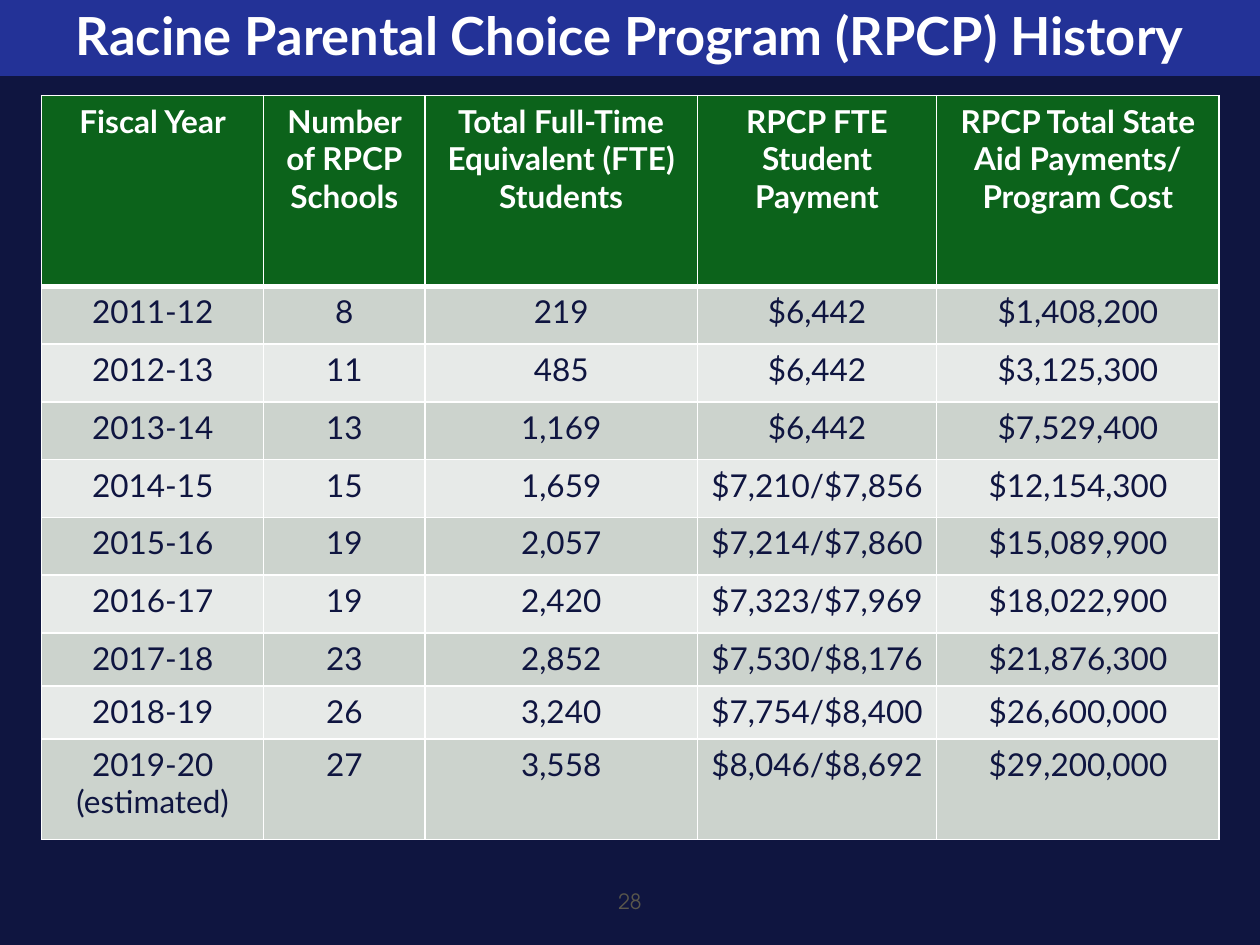
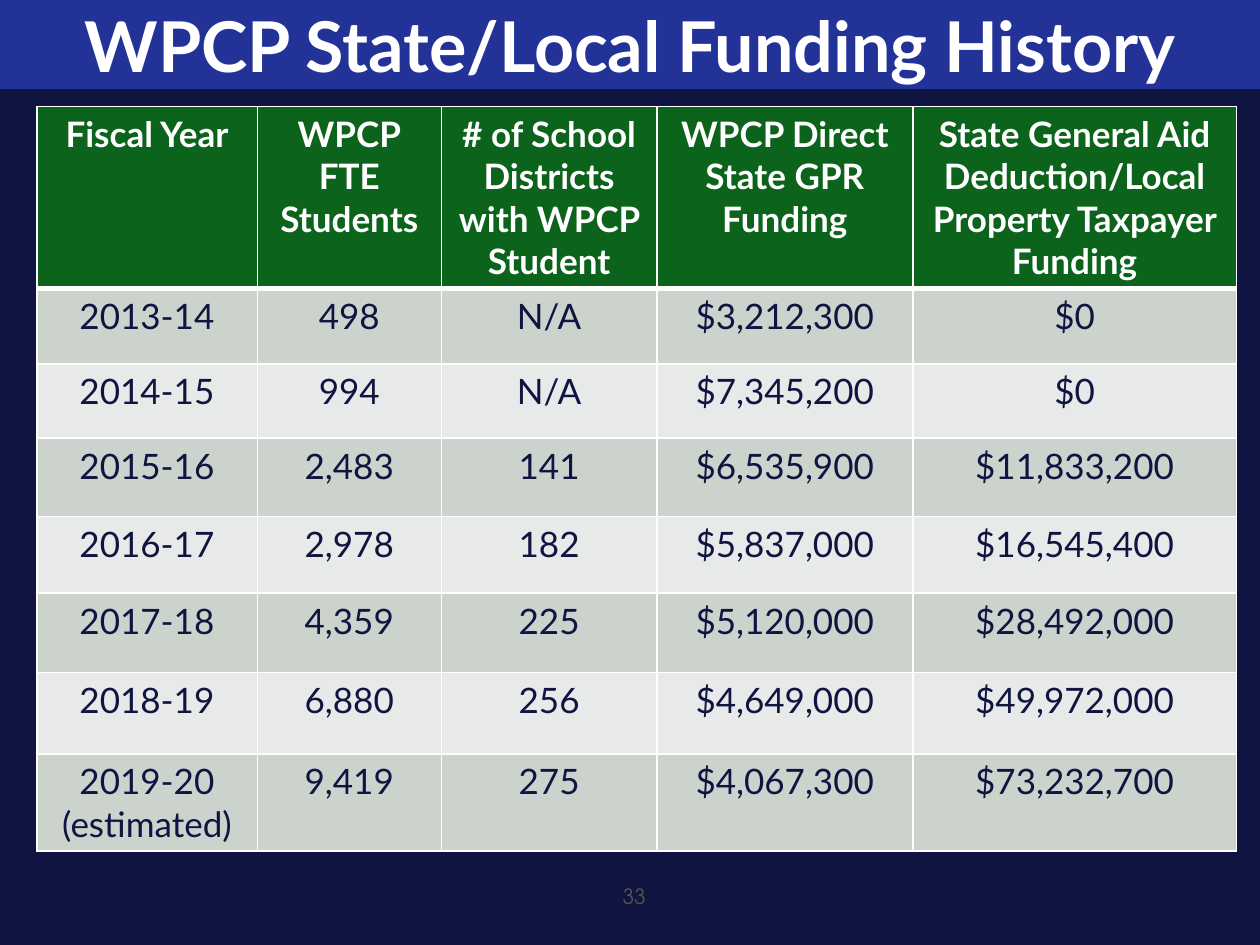
from lxml import etree
from pptx import Presentation
from pptx.dml.color import RGBColor
from pptx.enum.text import MSO_ANCHOR, MSO_AUTO_SIZE, PP_ALIGN
from pptx.oxml.ns import qn
from pptx.util import Pt

CENTER = PP_ALIGN.CENTER
MIDDLE = MSO_ANCHOR.MIDDLE
NO_AUTOFIT = MSO_AUTO_SIZE.NONE

NAVY = RGBColor(0x0F, 0x15, 0x40)
BLUE = RGBColor(0x23, 0x32, 0x97)
GREEN = RGBColor(0x0C, 0x63, 0x1B)
WHITE = RGBColor(0xFF, 0xFF, 0xFF)
GREY = RGBColor(0x59, 0x56, 0x4B)
BAND_DARK = RGBColor(0xCC, 0xD3, 0xCD)
BAND_LIGHT = RGBColor(0xE7, 0xEA, 0xE8)

TEXT_FONT = "Lato"
NUMBER_FONT = "TeX Gyre Adventor"
THIN, THICK = Pt(1), Pt(3)

# In cells, "\n" starts a paragraph and "\v" breaks a line.
RACINE_ROWS = [
    ["Fiscal Year", "Number of RPCP\nSchools",
     "Total Full-Time\nEquivalent (FTE) Students",
     "RPCP FTE Student\nPayment",
     "RPCP Total State Aid Payments/\nProgram Cost"],
    ["2011-12", "8", "219", "$6,442", "$1,408,200"],
    ["2012-13", "11", "485", "$6,442", "$3,125,300"],
    ["2013-14", "13", "1,169", "$6,442", "$7,529,400"],
    ["2014-15", "15", "1,659", "$7,210/$7,856", "$12,154,300"],
    ["2015-16", "19", "2,057", "$7,214/$7,860", "$15,089,900"],
    ["2016-17", "19", "2,420", "$7,323/$7,969", "$18,022,900"],
    ["2017-18", "23", "2,852", "$7,530/$8,176", "$21,876,300"],
    ["2018-19", "26", "3,240", "$7,754/$8,400", "$26,600,000"],
    ["2019-20\v(estimated)", "27", "3,558", "$8,046/$8,692", "$29,200,000"],
]
WPCP_ROWS = [
    ["Fiscal Year", "WPCP\nFTE Students",
     "# of School Districts with WPCP Student",
     "WPCP Direct State GPR Funding",
     "State General Aid Deduction/Local Property Taxpayer Funding"],
    ["2013-14", "498", "N/A", "$3,212,300", "$0"],
    ["2014-15", "994", "N/A", "$7,345,200", "$0"],
    ["2015-16", "2,483", "141", "$6,535,900", "$11,833,200"],
    ["2016-17", "2,978", "182", "$5,837,000", "$16,545,400"],
    ["2017-18", "4,359", "225", "$5,120,000", "$28,492,000"],
    ["2018-19", "6,880", "256", "$4,649,000", "$49,972,000"],
    ["2019-20\v(estimated)", "9,419", "275", "$4,067,300", "$73,232,700"],
]


class HistoryDeck:
    """Holds the shared style and the slide being built."""

    def __init__(self):
        self.deck = Presentation()
        self.deck.slide_width, self.deck.slide_height = Pt(720), Pt(540)
        background = self.deck.slide_master.background.fill
        background.solid()
        background.fore_color.rgb = NAVY
        self.slide = None

    def add_slide(self):
        self.slide = self.deck.slides.add_slide(self.deck.slide_layouts[5])

    def set_text(self, frame, text, size, color, bold=False, font=TEXT_FONT):
        frame.word_wrap = True
        frame.text = text
        for paragraph in frame.paragraphs:
            paragraph.alignment = CENTER
            paragraph.font.name = font
            paragraph.font.size = Pt(size)
            paragraph.font.bold = bold
            paragraph.font.color.rgb = color

    def title(self, text, top, height, size):
        band = self.slide.shapes.title
        band.left, band.top = Pt(0), Pt(top)
        band.width, band.height = self.deck.slide_width, Pt(height)
        band.fill.solid()
        band.fill.fore_color.rgb = BLUE
        band.text_frame.auto_size = NO_AUTOFIT
        band.text_frame.vertical_anchor = MIDDLE
        self.set_text(band.text_frame, text, size, WHITE, bold=True)

    def page_number(self, number, left, top):
        box = self.slide.shapes.add_textbox(Pt(left), Pt(top), Pt(228), Pt(29))
        box.text_frame.vertical_anchor = MIDDLE
        self.set_text(box.text_frame, str(number), 12, GREY, font=NUMBER_FONT)

    def cell_borders(self, cell, top, bottom):
        """Draw white borders; they must come before the fill in the cell."""
        properties = cell._tc.get_or_add_tcPr()
        sides = {"L": THIN, "R": THIN, "T": top, "B": bottom}
        for position, (side, width) in enumerate(sides.items()):
            line = etree.Element(qn(f"a:ln{side}"), w=str(width))
            fill = etree.SubElement(line, qn("a:solidFill"))
            etree.SubElement(fill, qn("a:srgbClr"), val=str(WHITE))
            properties.insert(position, line)

    def table(self, rows, left, top, widths, heights, size):
        frame = self.slide.shapes.add_table(
            len(rows), len(widths), Pt(left), Pt(top),
            Pt(sum(widths)), Pt(sum(heights)))
        table = frame.table
        for column, width in zip(table.columns, widths):
            column.width = Pt(width)
        for index, (row, height) in enumerate(zip(table.rows, heights)):
            row.height = Pt(height)
            header = index == 0
            band = GREEN if header else BAND_DARK if index % 2 else BAND_LIGHT
            for cell, text in zip(row.cells, rows[index]):
                cell.fill.solid()
                cell.fill.fore_color.rgb = band
                self.cell_borders(cell, THICK if index == 1 else THIN,
                                  THICK if header else THIN)
                self.set_text(cell.text_frame, text, size,
                              WHITE if header else NAVY, bold=header)


def main():
    history = HistoryDeck()

    history.add_slide()
    history.title("Racine Parental Choice Program (RPCP) History", -3.6, 47, 30)
    history.table(RACINE_ROWS, 23.8, 54.7, [126.9, 92.2, 155.6, 136.8, 161.4],
                  [109] + [33] * 6 + [30.25] * 2 + [57.5], 18)
    history.page_number(28, 246, 500.5)

    history.add_slide()
    history.title("WPCP State/Local Funding History", 0, 51, 40)
    history.table(WPCP_ROWS, 21, 61, [126, 105.2, 123.2, 146.2, 185],
                  [103.7, 43.2, 42.5, 44.6, 44, 45.2, 46.6, 55.4], 20)
    history.page_number(33, 248.4, 497.5)

    history.deck.save("out.pptx")


if __name__ == "__main__":
    main()
